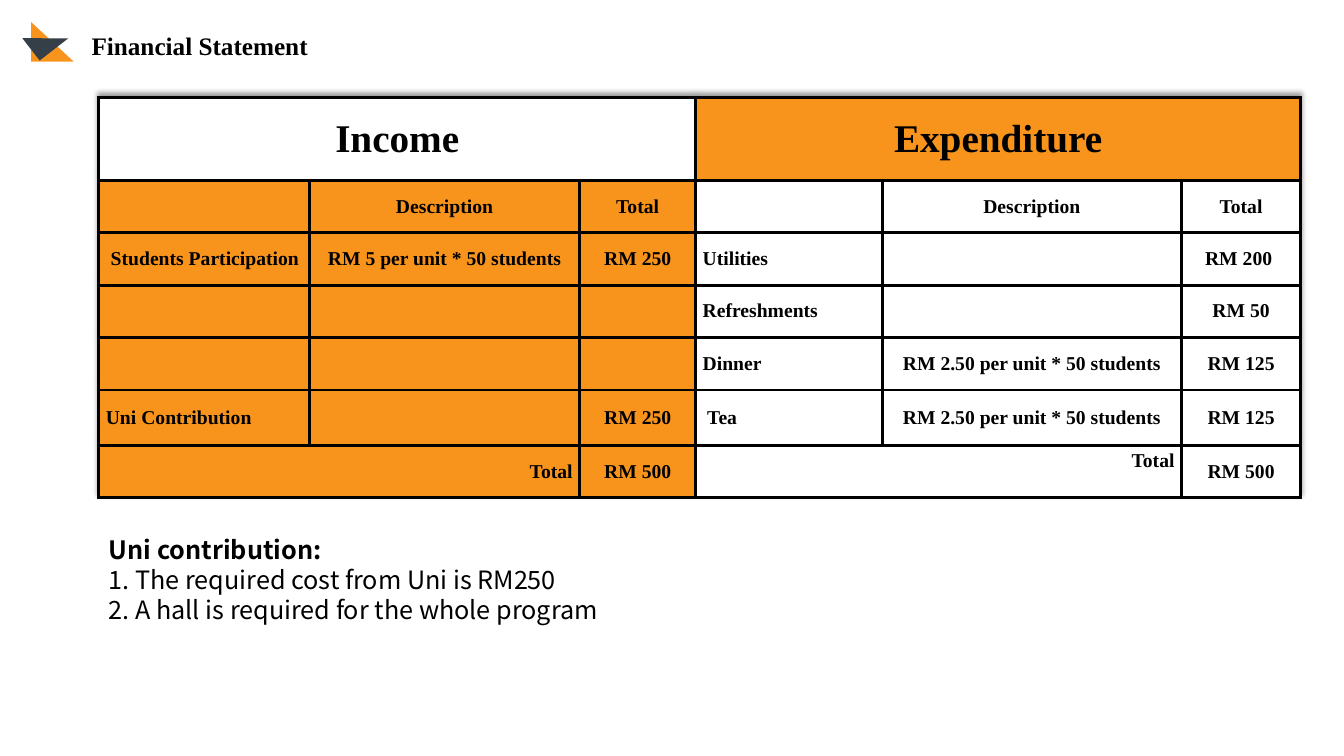
from lxml import etree
from pptx import Presentation
from pptx.dml.color import RGBColor
from pptx.enum.shapes import MSO_SHAPE
from pptx.enum.text import MSO_ANCHOR, PP_ALIGN
from pptx.oxml import parse_xml
from pptx.util import Inches, Pt

LEFT, CENTER, RIGHT = PP_ALIGN.LEFT, PP_ALIGN.CENTER, PP_ALIGN.RIGHT
MIDDLE = MSO_ANCHOR.MIDDLE
TRIANGLE = MSO_SHAPE.RIGHT_TRIANGLE
DRAWING_NS = "http://schemas.openxmlformats.org/drawingml/2006/main"

ORANGE, WHITE, BLACK, SLATE = "F8941C", "FFFFFF", "000000", "353F48"
SERIF, SANS = "Times New Roman", "Noto Sans CJK KR"

COLUMN_WIDTHS = [2.09, 2.68, 1.15, 1.85, 2.97, 1.18]
ROW_HEIGHTS = [0.82, 0.52, 0.52, 0.52, 0.52, 0.55, 0.52]
STATEMENT = [
    ["Income", "", "", "Expenditure", "", ""],
    ["", "Description", "Total", "", "Description", "Total"],
    [" Students Participation", "RM 5 per unit * 50 students", "RM 250",
     "Utilities", "", "RM 200 "],
    ["", "", "", "Refreshments", "", "RM 50"],
    ["", "", "", "Dinner", "RM 2.50 per unit * 50 students", "RM 125"],
    ["Uni Contribution", "", "RM 250",
     " Tea", "RM 2.50 per unit * 50 students", "RM 125"],
    ["Total", "", "RM 500", "Total", "", "RM 500"],
]
LAST_ROW = len(STATEMENT) - 1


def color(hex_value):
    return RGBColor.from_string(hex_value)


def write(para, text, name, size, bold):
    span = para.add_run()
    span.text = text
    formats = {"name": name, "size": Pt(size), "bold": bold}
    for attribute, value in formats.items():
        setattr(span.font, attribute, value)
    span.font.color.rgb = color(BLACK)


def add_text(page, area, lines, name):
    """Add a text box; lines holds (text, bold) pairs."""
    box = page.shapes.add_textbox(*map(Inches, area))
    frame = box.text_frame
    frame.word_wrap = True
    for index, (text, bold) in enumerate(lines):
        para = frame.add_paragraph() if index else frame.paragraphs[0]
        write(para, text, name, 18, bold)


def add_triangle(page, area, fill, rotation=0):
    shape = page.shapes.add_shape(TRIANGLE, *map(Inches, area))
    shape.shadow.inherit = False
    shape.fill.solid()
    shape.fill.fore_color.rgb = color(fill)
    shape.line.fill.background()
    shape.rotation = rotation


def add_borders(cell, points):
    properties = cell._tc.get_or_add_tcPr()
    for index, side in enumerate(["lnL", "lnR", "lnT", "lnB"]):
        line = etree.fromstring(
            f'<a:{side} xmlns:a="{DRAWING_NS}" w="{Pt(points)}"><a:solidFill>'
            f'<a:srgbClr val="{BLACK}"/></a:solidFill></a:{side}>')
        properties.insert(index, line)


def add_table_shadow(table):
    effect = parse_xml(
        f'<a:effectLst xmlns:a="{DRAWING_NS}"><a:outerShdw blurRad="50800" '
        f'dist="38100" dir="16200000" algn="b" rotWithShape="0">'
        f'<a:srgbClr val="{BLACK}"><a:alpha val="40000"/></a:srgbClr>'
        f'</a:outerShdw></a:effectLst>')
    table._tbl.tblPr.insert(0, effect)


def alignment(row, column):
    if row == 0 or column % 3:
        return CENTER
    return RIGHT if row == LAST_ROW else LEFT


def fill_cell(cell, row, column, text):
    # The two halves swap colours between the heading and the body
    cell.fill.solid()
    cell.fill.fore_color.rgb = color(ORANGE if (row == 0) == (column >= 3) else WHITE)
    add_borders(cell, 2.25)
    formats = {"margin_left": Inches(0.07), "margin_right": Inches(0.07),
               "margin_top": 0, "margin_bottom": 0, "vertical_anchor": MIDDLE}
    for attribute, value in formats.items():
        setattr(cell, attribute, value)
    if text:
        para = cell.text_frame.paragraphs[0]
        para.alignment = alignment(row, column)
        write(para, text, SERIF, 28 if row == 0 else 14, True)


def add_statement(page):
    area = (0.98, 0.97, sum(COLUMN_WIDTHS), sum(ROW_HEIGHTS))
    table = page.shapes.add_table(
        len(ROW_HEIGHTS), len(COLUMN_WIDTHS), *map(Inches, area)).table
    for column, width in zip(table.columns, COLUMN_WIDTHS):
        column.width = Inches(width)
    for row, height in zip(table.rows, ROW_HEIGHTS):
        row.height = Inches(height)
    for row, texts in enumerate(STATEMENT):
        for column, text in enumerate(texts):
            fill_cell(table.cell(row, column), row, column, text)

    # Headings span three columns, total labels span two
    for first in (0, 3):
        table.cell(0, first).merge(table.cell(0, first + 2))
        table.cell(LAST_ROW, first).merge(table.cell(LAST_ROW, first + 1))
    # The expenditure total label sits above the middle of its cell
    table.cell(LAST_ROW, 3).margin_bottom = Inches(0.22)
    add_table_shadow(table)


def main():
    deck = Presentation()
    deck.slide_width, deck.slide_height = Inches(13.33), Inches(7.5)
    page = deck.slides.add_slide(deck.slide_layouts[6])

    # Notes under the table
    add_text(page, (0.98, 5.25, 5.62, 1.01), [
        ("Uni contribution:", True),
        ("1. The required cost from Uni is RM250", False),
        ("2. A hall is required for the whole program", False),
    ], SANS)

    add_statement(page)

    # Title with its triangle ornament
    add_triangle(page, (0.31, 0.22, 0.42, 0.39), ORANGE)
    add_triangle(page, (0.27, 0.24, 0.36, 0.28), SLATE, 322.2)
    add_text(page, (0.81, 0.25, 2.77, 0.4), [("Financial Statement", True)], SERIF)

    deck.save("out.pptx")


if __name__ == "__main__":
    main()
